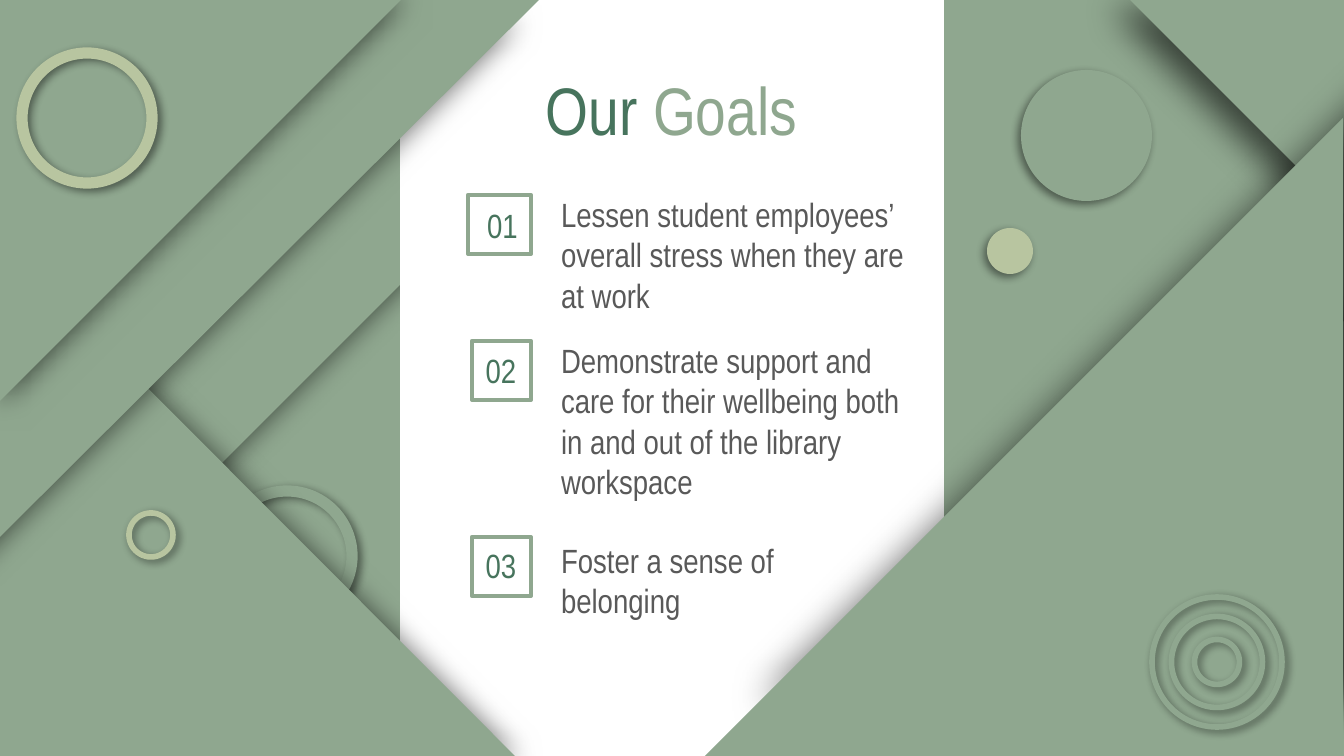
from lxml.etree import SubElement
from pptx import Presentation
from pptx.dml.color import RGBColor
from pptx.enum.shapes import MSO_SHAPE
from pptx.enum.text import MSO_ANCHOR, MSO_AUTO_SIZE, PP_ALIGN
from pptx.oxml.ns import qn
from pptx.util import Pt

SCALE = 914400 / 134.4
SAGE, LIME, PINE, GREY, WHITE = "8FA78F", "B8C5A0", "47745D", "595959", "FFFFFF"
FONT = "Arial Narrow"
SOFT = (45, 4.5, 2.2, 43)
DROP = (45, 4.5, 2.2, 138)
FOLD = (60, 15.8, 18.8, 134)
EDGE = (60, 15.8, 0.8, 65)
LIFT = (60, 21.4, 44.2, 316)


def px(value):
    return round(value * SCALE)


def tint(code):
    return RGBColor.from_string(code)


def apply(target, values):
    for name, value in values.items():
        setattr(target, name, value)


class Deck:
    frame = {"word_wrap": True, "auto_size": MSO_AUTO_SIZE.NONE,
             "margin_left": px(13), "margin_right": px(13),
             "margin_top": px(13), "margin_bottom": px(13)}
    font = {"name": FONT, "bold": False}

    def __init__(self):
        self.prs = Presentation()
        apply(self.prs, {"slide_width": px(1344), "slide_height": px(756)})
        self.slide = self.prs.slides.add_slide(self.prs.slide_layouts[4])
        self.shapes = self.slide.shapes

    def paint(self, shape, fill=None, line=None, width=0, shade=None):
        shape.shadow.inherit = False
        if fill:
            shape.fill.solid()
            shape.fill.fore_color.rgb = tint(fill)
        else:
            shape.fill.background()
        if line:
            shape.line.color.rgb = tint(line)
            shape.line.width = Pt(width)
        else:
            shape.line.fill.background()
        if shade:
            alpha, blur, dist, angle = shade
            effect = shape._element.spPr.find(qn("a:effectLst"))
            outer = SubElement(effect, qn("a:outerShdw"), blurRad=str(Pt(blur)),
                               dist=str(Pt(dist)), dir=str(angle * 60000),
                               algn="bl", rotWithShape="0")
            black = SubElement(outer, qn("a:srgbClr"), val="000000")
            SubElement(black, qn("a:alpha"), val=str(alpha * 1000))

    def box(self, x, y, w, h, **style):
        spot = map(px, (x, y, w, h))
        self.paint(self.shapes.add_shape(MSO_SHAPE.RECTANGLE, *spot), **style)

    def disc(self, x, y, size, **style):
        spot = map(px, (x, y, size, size))
        self.paint(self.shapes.add_shape(MSO_SHAPE.OVAL, *spot), **style)

    def wedge(self, points, shade):
        pen = self.shapes.build_freeform(*points[0], scale=SCALE)
        pen.add_line_segments(points[1:], close=True)
        self.paint(pen.convert_to_shape(), SAGE, shade=shade)

    def place(self, shape, spot, parts, size, align, **frame):
        self.shapes._spTree.append(shape._element)
        apply(shape, dict(zip(("left", "top", "width", "height"), map(px, spot))))
        text = shape.text_frame
        apply(text, {**self.frame, **frame})
        para = text.paragraphs[0]
        apply(para, {"alignment": align, "space_before": Pt(0)})
        props = para._p.get_or_add_pPr()
        for name in ("marL", "indent"):
            props.set(name, "0")
        SubElement(props, qn("a:buNone"))
        for words, color in parts:
            run = para.add_run()
            run.text = words
            apply(run.font, {**self.font, "size": Pt(size)})
            run.font.color.rgb = tint(color)

    def title(self, spot, parts):
        self.place(self.shapes.title, spot, parts, 36, PP_ALIGN.CENTER,
                   vertical_anchor=MSO_ANCHOR.TOP)

    def label(self, spot, words):
        shape = self.shapes.add_textbox(0, 0, 0, 0)
        self.place(shape, spot, [(words, PINE)], 18, PP_ALIGN.CENTER,
                   vertical_anchor=MSO_ANCHOR.MIDDLE)

    def goal(self, holder, spot, words):
        self.place(holder, spot, [(words, GREY)], 18, PP_ALIGN.LEFT,
                   vertical_anchor=MSO_ANCHOR.TOP, margin_top=0)


def main():
    deck = Deck()
    deck.box(2, -2, 1347, 757, fill=SAGE)
    deck.disc(222, 491, 130, line=SAGE, width=6, shade=SOFT)
    deck.wedge([(0, 0), (0, 685), (685, 0)], FOLD)
    deck.box(400, 0, 544, 758, fill=WHITE)
    deck.wedge([(1344, 321), (908, 757), (1344, 757)], LIFT)
    deck.wedge([(1344, 380), (968, 756), (1344, 756)], (60, 19.1, 22.5, 134))
    deck.wedge([(-2, 758), (517, 758), (-2, 238)], EDGE)
    deck.wedge([(-2, -2), (-2, 539), (541, -2)], FOLD)
    deck.wedge([(0, -2), (0, 401), (403, -2)], EDGE)
    deck.wedge([(1128, -2), (1344, 214), (1344, -2)], (60, 19.1, 10.5, 145))
    deck.disc(1021, 70, 131, fill=SAGE, shade=DROP)
    deck.disc(987, 228, 46, fill=LIME, shade=DROP)
    deck.wedge([(1343, 118), (703, 758), (1343, 758)], LIFT)
    for size in (130, 91, 45):
        deck.disc(1217 - size / 2, 662 - size / 2, size, line=SAGE, width=3, shade=SOFT)
    deck.disc(22, 53, 130, line=LIME, width=6, shade=SOFT)
    deck.disc(129, 513, 44, line=LIME, width=3, shade=SOFT)

    deck.title((464, 55, 415, 85), [("Our ", PINE), ("Goals", SAGE)])
    goals = [
        ((425, 191, 155, 69), (468, 195, 63, 59), (548, 194, 380, 145),
         "Lessen student employees’ overall stress when they are at work"),
        ((429, 336, 144, 69), (472, 341, 59, 59), (548, 340, 380, 207),
         "Demonstrate support and care for their wellbeing both in and out "
         "of the library workspace"),
        ((429, 531, 144, 69), (472, 537, 59, 59), (548, 540, 278, 136),
         "Foster a sense of belonging"),
    ]
    *holders, spare = list(deck.slide.placeholders)[1:]
    for step, (holder, (mark, frame, spot, words)) in enumerate(zip(holders, goals), 1):
        deck.label(mark, f"{step:02}")
        deck.goal(holder, spot, words)
        deck.box(*frame, line=SAGE, width=2.25)
    spare._element.getparent().remove(spare._element)
    deck.prs.save("out.pptx")


if __name__ == "__main__":
    main()
